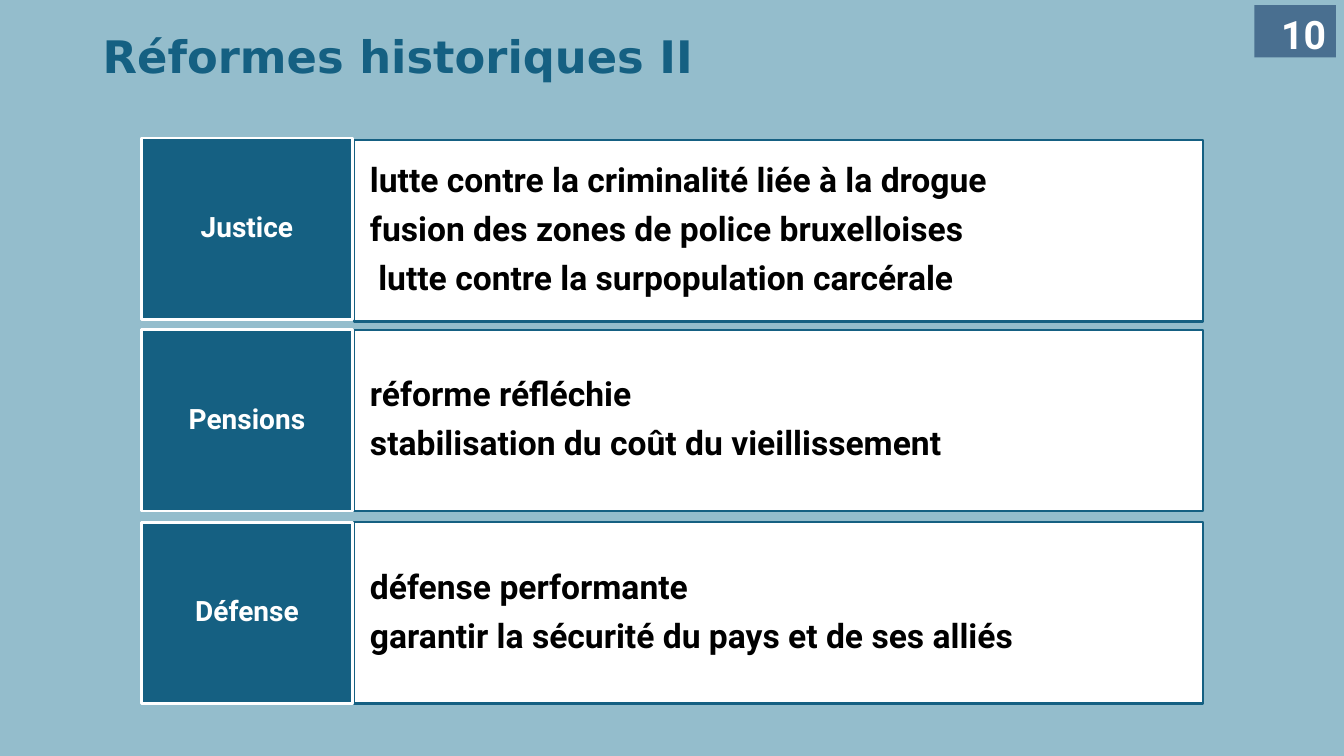
"""Build the slide on historic reforms: three labelled rows under a title."""
from pptx import Presentation
from pptx.dml.color import RGBColor
from pptx.enum.shapes import MSO_SHAPE as SHAPE
from pptx.enum.text import MSO_ANCHOR as ANCHOR, PP_ALIGN as ALIGN
from pptx.util import Inches, Pt

TITLE = "Réformes historiques II"
PAGE = "10"
REFORMS = [
    ("Justice", [
        "lutte contre la criminalité liée à la drogue",
        "fusion des zones de police bruxelloises",
        " lutte contre la surpopulation carcérale",
    ]),
    ("Pensions", [
        "réforme réfléchie",
        "stabilisation du coût du vieillissement",
    ]),
    ("Défense", [
        "défense performante",
        "garantir la sécurité du pays et de ses alliés",
    ]),
]

BACKGROUND, BLUE, BADGE = "94BDCC", "156082", "496F90"
WHITE, BLACK = "FFFFFF", "000000"
LABEL_LEFT, LABEL_WIDTH = 1.4, 2.1
MEASURE_LEFT, MEASURE_WIDTH = 3.51, 8.42
ROW_TOPS = [(1.37, 1.39), (3.27, 3.27), (5.18, 5.18)]
ROW_HEIGHT = 1.8


def color(value):
    return RGBColor.from_string(value)


def write(shape, lines, size, ink, font="Roboto", align=ALIGN.LEFT,
          anchor=ANCHOR.MIDDLE, inset=(0.1, 0.05), spacing=0.9, after=0):
    frame = shape.text_frame
    frame.word_wrap = True
    frame.vertical_anchor = anchor
    frame.margin_left = frame.margin_right = Inches(inset[0])
    frame.margin_top = frame.margin_bottom = Inches(inset[1])
    for index, line in enumerate(lines):
        paragraph = frame.add_paragraph() if index else frame.paragraphs[0]
        paragraph.alignment = align
        paragraph.line_spacing = spacing
        paragraph.space_after = Pt(after)
        run = paragraph.add_run()
        run.text = line
        run.font.name = font
        run.font.size = Pt(size)
        run.font.bold = True
        run.font.color.rgb = color(ink)


def add_box(slide, place, fill, line=None, weight=1):
    box = slide.shapes.add_shape(SHAPE.RECTANGLE, *map(Inches, place))
    box.shadow.inherit = False
    box.fill.solid()
    box.fill.fore_color.rgb = color(fill)
    if line:
        box.line.color.rgb = color(line)
        box.line.width = Pt(weight)
    else:
        box.line.fill.background()
    return box


def main():
    deck = Presentation()
    deck.slide_width, deck.slide_height = Inches(13.33), Inches(7.5)
    slide = deck.slides.add_slide(deck.slide_layouts[6])
    slide.background.fill.solid()
    slide.background.fill.fore_color.rgb = color(BACKGROUND)

    title = slide.shapes.add_textbox(*map(Inches, (0.92, 0.14, 11.5, 0.9)))
    write(title, [TITLE], 32, BLUE, font="DejaVu Sans")

    for (name, measures), (label_top, measure_top) in zip(REFORMS, ROW_TOPS):
        panel = add_box(slide, (MEASURE_LEFT, measure_top, MEASURE_WIDTH, ROW_HEIGHT),
                        WHITE, BLUE, 1.5)
        write(panel, measures, 24, BLACK, inset=(0.16, 0.46), after=9)
        label = add_box(slide, (LABEL_LEFT, label_top, LABEL_WIDTH, ROW_HEIGHT),
                        BLUE, WHITE, 2)
        write(label, [name], 20, WHITE, align=ALIGN.CENTER, inset=(0.11, 0.18), after=7)

    badge = add_box(slide, (12.44, 0.05, 0.81, 0.52), BADGE)
    write(badge, [PAGE], 28, WHITE, align=ALIGN.RIGHT, anchor=ANCHOR.TOP, spacing=1.0)

    deck.save("out.pptx")


if __name__ == "__main__":
    main()
